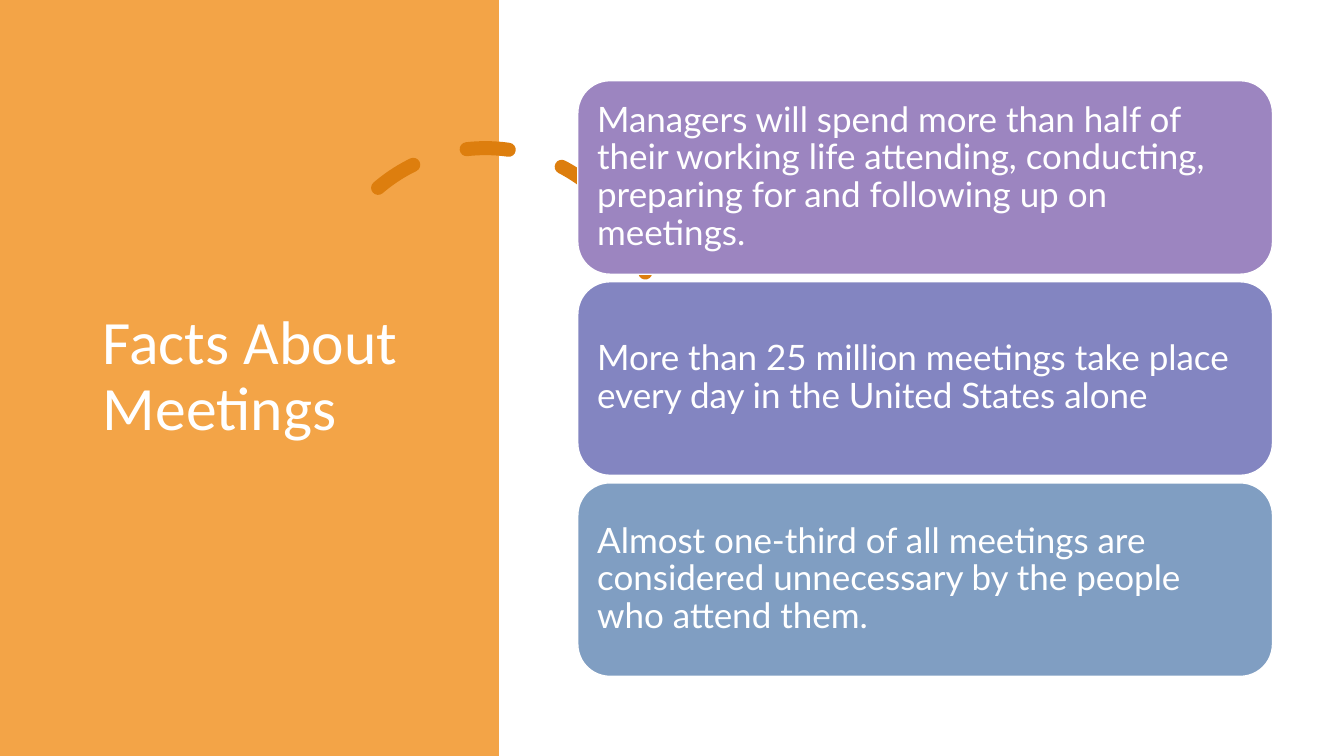
from dataclasses import dataclass

from pptx import Presentation
from pptx.dml.color import RGBColor
from pptx.enum.dml import MSO_LINE
from pptx.enum.shapes import MSO_SHAPE
from pptx.enum.text import MSO_ANCHOR, PP_ALIGN
from pptx.util import Inches, Pt

WIDTH, HEIGHT = Inches(13.33), Inches(7.5)
TITLE_ONLY = 5


@dataclass(frozen=True)
class Theme:
    panel: str = "F3A447"
    arc: str = "DD7E0E"
    white: str = "FFFFFF"
    cards: tuple = ("9C85C0", "8385C1", "809EC2")
    title_font: str = "Calibri"
    card_font: str = "Lato"
    title_size: int = 44
    card_size: int = 25


THEME = Theme()
FACTS = (
    "Managers will spend more than half of their working life attending, "
    "conducting, preparing for and following up on meetings.",
    "More than 25 million meetings take place every day in the United States alone",
    "Almost one-third of all meetings are considered unnecessary by the people "
    "who attend them.",
)


def rgb(color):
    return RGBColor.from_string(color)


def area(left, top, width, height):
    """Turn percentages of the slide into lengths."""
    return (
        int(WIDTH * left / 100),
        int(HEIGHT * top / 100),
        int(WIDTH * width / 100),
        int(HEIGHT * height / 100),
    )


def add_shape(slide, kind, box, fill=None, line=None, weight=1):
    sp = slide.shapes.add_shape(kind, *box)
    sp.shadow.inherit = False
    if fill:
        sp.fill.solid()
        sp.fill.fore_color.rgb = rgb(fill)
    else:
        sp.fill.background()
    if line:
        sp.line.color.rgb = rgb(line)
        sp.line.width = Pt(weight)
    else:
        sp.line.fill.background()
    return sp


def write(sp, text, font, size):
    tf = sp.text_frame
    tf.word_wrap = True
    tf.vertical_anchor = MSO_ANCHOR.MIDDLE
    tf.text = text
    p = tf.paragraphs[0]
    p.alignment = PP_ALIGN.LEFT
    p.line_spacing = 0.9
    p.font.name = font
    p.font.size = Pt(size)
    p.font.color.rgb = rgb(THEME.white)


def add_dashed_arc(slide):
    arc = add_shape(slide, MSO_SHAPE.ARC, area(23.86, 19.6, 24.53, 43.6),
                    line=THEME.arc, weight=10)
    arc.adjustments[0] = 146.13
    arc.rotation = 345.8
    arc.line.dash_style = MSO_LINE.DASH
    arc.line._get_or_add_ln().set("cap", "rnd")


def add_title(slide, text):
    title = slide.shapes.title
    title.left, title.top, title.width, title.height = area(6.9, 9.33, 24.23, 81.2)
    write(title, text, THEME.title_font, THEME.title_size)
    slide.shapes._spTree.append(title._element)


def add_card(slide, row, text, fill):
    card = add_shape(slide, MSO_SHAPE.ROUNDED_RECTANGLE,
                     area(42.99, 10.67 + 26.6 * row, 51.69, 25.6),
                     fill, THEME.white)
    tf = card.text_frame
    tf.margin_left = tf.margin_right = tf.margin_top = tf.margin_bottom = Inches(0.1)
    write(card, text, THEME.card_font, THEME.card_size)


def main():
    prs = Presentation()
    prs.slide_width, prs.slide_height = WIDTH, HEIGHT
    slide = prs.slides.add_slide(prs.slide_layouts[TITLE_ONLY])
    add_shape(slide, MSO_SHAPE.RECTANGLE, area(0, 0, 37.13, 100), THEME.panel)
    add_dashed_arc(slide)
    add_title(slide, "Facts About Meetings")
    for row, (text, fill) in enumerate(zip(FACTS, THEME.cards)):
        add_card(slide, row, text, fill)
    prs.save("out.pptx")


if __name__ == "__main__":
    main()
